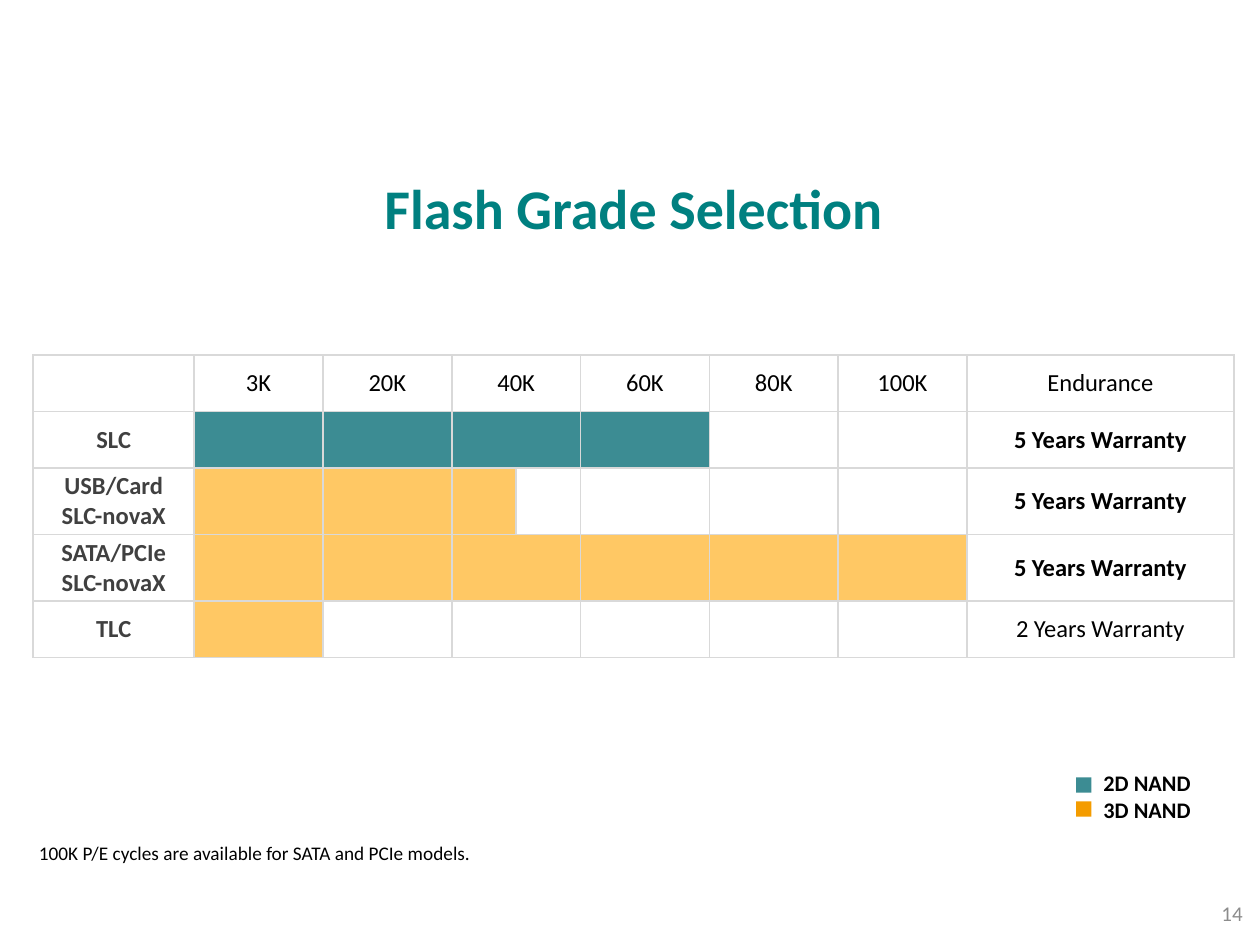
"""Build the flash grade selection slide."""
import pptx
import pptx.dml.color
import pptx.enum.shapes
import pptx.enum.text
import pptx.oxml
import pptx.oxml.ns
import pptx.util

Pt = pptx.util.Pt
ALIGN = pptx.enum.text.PP_ALIGN
MIDDLE = pptx.enum.text.MSO_ANCHOR.MIDDLE
COLORS = {"teal": "3C8C93", "amber": "FFC864", "orange": "F49C00", "title": "008080",
          "text": "000000", "label": "404040", "number": "8C8C8C", "border": "D9D9D9"}
COLUMN_WIDTHS = [92, 73.6, 73.6, 36.8, 36.8, 73.6, 73.6, 73.6, 152.6]
HALF_COLUMN = 3
HEADINGS = ["", "3K", "20K", "40K", "", "60K", "80K", "100K", "Endurance"]
GRADES = [
    (["SLC"], "teal", 5, "5 Years Warranty", True),
    (["USB/Card", "SLC-novaX"], "amber", 3, "5 Years Warranty", True),
    (["SATA/PCIe", "SLC-novaX"], "amber", 7, "5 Years Warranty", True),
    (["TLC"], "amber", 1, "2 Years Warranty", False),
]
LEGEND = [("2D NAND", "teal"), ("3D NAND", "orange")]


class SlideBuilder:
    """Hold the style and the current slide."""

    font = "Calibri"

    def __init__(self, presentation):
        self.slide = presentation.slides.add_slide(presentation.slide_layouts[5])

    def color(self, name):
        return pptx.dml.color.RGBColor.from_string(COLORS[name])

    def add_lines(self, frame, lines, size, color="text", bold=False, align=ALIGN.LEFT):
        for index, line in enumerate(lines):
            paragraph = frame.add_paragraph() if index else frame.paragraphs[0]
            paragraph.alignment = align
            run = paragraph.add_run()
            run.text = line
            run.font.name = self.font
            run.font.size = Pt(size)
            run.font.bold = bold
            run.font.color.rgb = self.color(color)

    def title(self, text, left, top, width, height):
        shape = self.slide.shapes.title
        shape.left, shape.top, shape.width, shape.height = map(Pt, (left, top, width, height))
        shape.text_frame.vertical_anchor = MIDDLE
        self.add_lines(shape.text_frame, [text], 32, "title", True, ALIGN.CENTER)

    def text(self, lines, left, top, width, height, size, wrap=True, anchor=None, **style):
        shape = self.slide.shapes.add_textbox(Pt(left), Pt(top), Pt(width), Pt(height))
        shape.text_frame.word_wrap = wrap
        shape.text_frame.vertical_anchor = anchor
        self.add_lines(shape.text_frame, lines, size, **style)

    def square(self, left, top, side, color):
        shape = self.slide.shapes.add_shape(
            pptx.enum.shapes.MSO_SHAPE.RECTANGLE, Pt(left), Pt(top), Pt(side), Pt(side))
        shape.shadow.inherit = False
        shape.fill.solid()
        shape.fill.fore_color.rgb = self.color(color)
        shape.line.fill.background()

    def table(self, left, top, widths, row_count, row_height):
        frame = self.slide.shapes.add_table(
            row_count, len(widths), Pt(left), Pt(top), Pt(sum(widths)), Pt(row_count * row_height))
        table = frame.table
        table.first_row = table.horz_banding = False
        for column, width in zip(table.columns, widths):
            column.width = Pt(width)
        for cell in table.iter_cells():
            cell.fill.background()
            self.border(cell)
        return table

    def border(self, cell):
        properties = cell._tc.get_or_add_tcPr()
        for index, side in enumerate("LRTB"):
            properties.insert(index, pptx.oxml.parse_xml(
                f'<a:ln{side} {pptx.oxml.ns.nsdecls("a")} w="12700"><a:solidFill>'
                f'<a:srgbClr val="{COLORS["border"]}"/></a:solidFill></a:ln{side}>'))

    def cell_text(self, cell, lines, color="text", bold=False):
        cell.vertical_anchor = MIDDLE
        cell.margin_left = cell.margin_right = Pt(3.6)
        cell.margin_top = cell.margin_bottom = Pt(2)
        self.add_lines(cell.text_frame, lines, 14, color, bold, ALIGN.CENTER)

    def cell_fill(self, cell, color):
        cell.fill.solid()
        cell.fill.fore_color.rgb = self.color(color)


def main():
    presentation = pptx.Presentation()
    presentation.slide_width, presentation.slide_height = Pt(720), Pt(540)
    builder = SlideBuilder(presentation)

    table = builder.table(19, 203, COLUMN_WIDTHS, len(GRADES) + 1, 32.2)
    for column, heading in enumerate(HEADINGS):
        if heading:
            builder.cell_text(table.cell(0, column), [heading])
    for row, (labels, color, filled, warranty, bold) in enumerate(GRADES, start=1):
        builder.cell_text(table.cell(row, 0), labels, "label", True)
        for column in range(1, filled + 1):
            builder.cell_fill(table.cell(row, column), color)
        builder.cell_text(table.cell(row, len(COLUMN_WIDTHS) - 1), [warranty], bold=bold)
    for row in range(len(GRADES) + 1):
        if row == 0 or GRADES[row - 1][2] != HALF_COLUMN:
            table.cell(row, HALF_COLUMN).merge(table.cell(row, HALF_COLUMN + 1))

    builder.title("Flash Grade Selection", 65.5, 88.5, 593.3, 59.8)
    builder.text([name for name, color in LEGEND], 623.5, 436.3, 75, 38.2, 12.7, bold=True)
    for index, (name, color) in enumerate(LEGEND):
        builder.square(614.9, 444.2 + index * 13.7, 8.8, color)
    builder.text(["14"], 549.4, 507.6, 167.8, 28.8, 12, anchor=MIDDLE,
                 color="number", align=ALIGN.RIGHT)
    builder.text(["100K P/E cycles are available for SATA and PCIe models."],
                 15.1, 477.4, 265.7, 20.6, 11, wrap=False)
    presentation.save("out.pptx")


if __name__ == "__main__":
    main()
